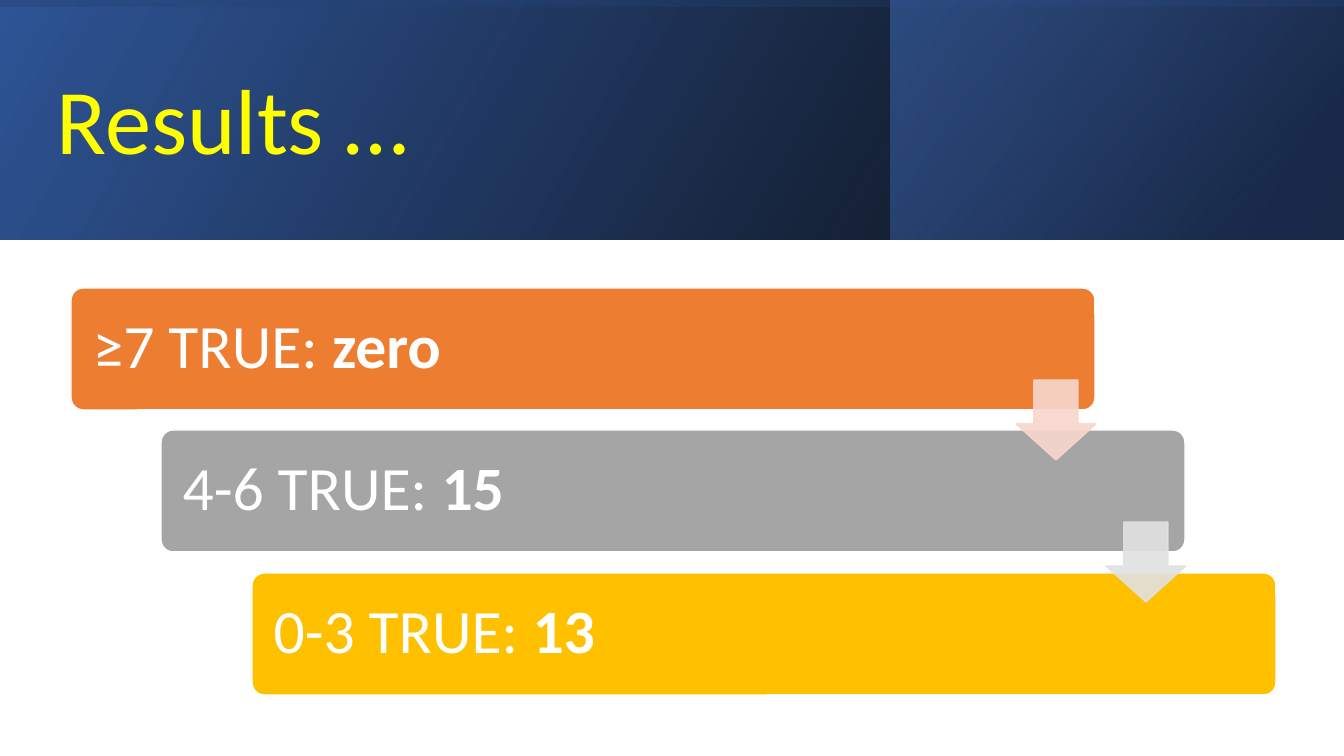
import dataclasses

import lxml.etree
import pptx
import pptx.dml.color
import pptx.enum.shapes
import pptx.enum.text
import pptx.oxml.ns
import pptx.util

SHAPES = pptx.enum.shapes.MSO_SHAPE
EMU_PER_PX = 914400 / 100.8


@dataclasses.dataclass(frozen=True)
class Theme:
    font: str = "Calibri"
    title_size: int = 66
    bar_size: int = 44
    title: str = "FFFF00"
    light: str = "FFFFFF"
    black: str = "000000"
    navy: str = "203864"
    deep_blue: str = "2F5597"
    blue: str = "4472C4"
    bars: tuple = ("ED7D31", "A5A5A5", "FFC000")
    arrows: tuple = ("F8D7CE", "E1E1E1")


def px(length):
    return pptx.util.Emu(round(length * EMU_PER_PX))


def rgb(color):
    return pptx.dml.color.RGBColor.from_string(color)


def apply(target, values):
    for name, value in values.items():
        setattr(target, name, value)


def add_element(parent, tag, **attributes):
    return lxml.etree.SubElement(parent, pptx.oxml.ns.qn(tag), attributes)


class Builder:
    def __init__(self, page, theme):
        self.page = page
        self.theme = theme

    def shape(self, kind, place, adjustments=()):
        shape = self.page.shapes.add_shape(kind, *map(px, place))
        shape.shadow.inherit = False
        for index, value in enumerate(adjustments):
            shape.adjustments[index] = value
        return shape

    def gradient_band(self, place, stops, angle, rotation=0):
        band = self.shape(SHAPES.RECTANGLE, place)
        band.rotation = rotation
        band.line.fill.background()
        band.fill.gradient()
        properties = band._element.spPr
        properties.find(pptx.oxml.ns.qn("a:xfrm")).set("flipH", "1")
        gradient = properties.find(pptx.oxml.ns.qn("a:gradFill"))
        gradient.clear()
        gradient.set("rotWithShape", "1")
        stop_list = add_element(gradient, "a:gsLst")
        for position, color, alpha in stops:
            stop = add_element(stop_list, "a:gs", pos=str(position * 1000))
            tint = add_element(stop, "a:srgbClr", val=color)
            add_element(tint, "a:alpha", val=str(alpha * 1000))
        add_element(gradient, "a:lin", ang=str(angle * 60000), scaled="0")

    def text(self, shape, spans, size, color, margins):
        frame = shape.text_frame
        apply(frame, {"word_wrap": True, "vertical_anchor": pptx.enum.text.MSO_ANCHOR.MIDDLE, **margins})
        para = frame.paragraphs[0]
        apply(para, {"alignment": pptx.enum.text.PP_ALIGN.LEFT, "line_spacing": 0.9})
        for wording, bold in spans:
            span = para.add_run()
            span.text = wording
            apply(span.font, {"name": self.theme.font, "size": pptx.util.Pt(size), "bold": bold})
            span.font.color.rgb = rgb(color)

    def title(self, place, wording):
        box = self.page.shapes.add_textbox(*map(px, place))
        self.text(box, [(wording, False)], self.theme.title_size, self.theme.title, {})

    def paint(self, shape, fill, line):
        shape.fill.solid()
        shape.fill.fore_color.rgb = rgb(fill)
        shape.line.color.rgb = rgb(line)
        shape.line.width = pptx.util.Pt(1)

    def bar(self, place, color, label, count):
        bar = self.shape(SHAPES.ROUNDED_RECTANGLE, place, [0.1])
        self.paint(bar, color, self.theme.light)
        sides = ("left", "top", "right", "bottom")
        margins = {f"margin_{side}": px(18) for side in sides}
        self.text(bar, [(label, False), (count, True)], self.theme.bar_size, self.theme.light, margins)

    def arrow(self, place, color):
        arrow = self.shape(SHAPES.DOWN_ARROW, place, [0.55, 0.45])
        self.paint(arrow, color, color)
        for tint in arrow._element.spPr.iter(pptx.oxml.ns.qn("a:srgbClr")):
            add_element(tint, "a:alpha", val="90000")


def main():
    deck = pptx.Presentation()
    apply(deck, {"slide_width": px(1344), "slide_height": px(756)})
    theme = Theme()
    builder = Builder(deck.slides.add_slide(deck.slide_layouts[6]), theme)

    builder.gradient_band((0, 0, 1344, 240), [(0, theme.black, 96), (100, theme.deep_blue, 100)], 330)
    builder.gradient_band((891, 0, 452, 240), [(19, theme.navy, 68), (100, theme.blue, 48)], 320)
    builder.gradient_band((552, -552, 240, 1344), [(23, theme.deep_blue, 16), (99, theme.black, 45)], 350, 270)
    builder.title((47, 38, 1176, 173), "Results …")

    results = [("≥7 TRUE: ", "zero"), ("4-6 TRUE: ", "15"), ("0-3 TRUE: ", "13")]
    corners = [(71 + 181 * step // 2, 288 + 285 * step // 2) for step in range(len(results))]
    for (left, top), color, (label, count) in zip(corners, theme.bars, results):
        builder.bar((left, top, 1024, 122), color, label, count)
    for (left, top), color in zip(corners, theme.arrows):
        builder.arrow((left + 945, top + 92, 80, 80), color)

    deck.save("out.pptx")


if __name__ == "__main__":
    main()
